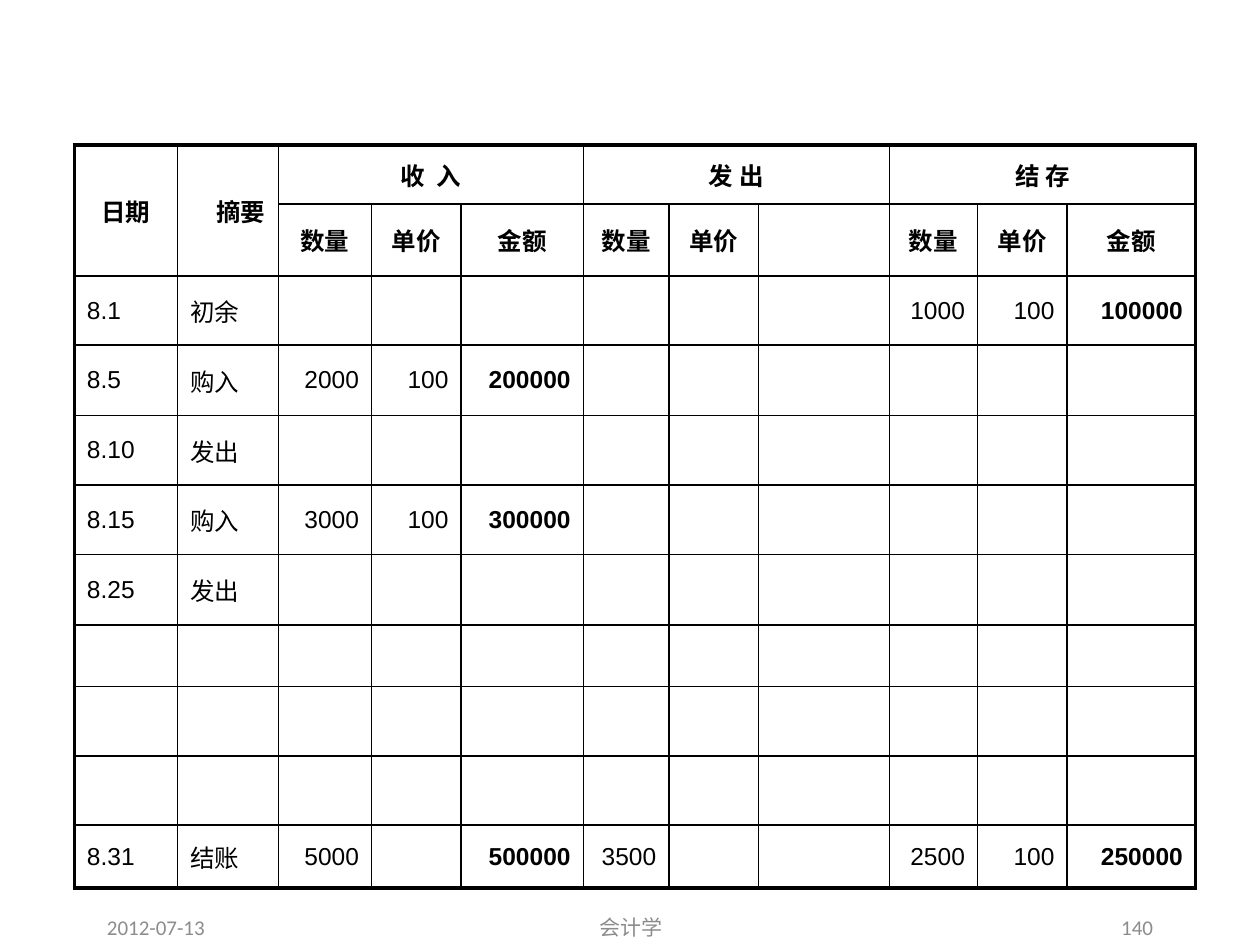
from dataclasses import dataclass

from lxml import etree
from pptx import Presentation
from pptx.dml.color import RGBColor
from pptx.enum.text import MSO_ANCHOR, PP_ALIGN
from pptx.oxml.ns import qn
from pptx.slide import Slide
from pptx.table import Table, _Cell
from pptx.text.text import _Paragraph
from pptx.util import Inches, Pt

LEFT, CENTER, RIGHT, JUSTIFY = PP_ALIGN.LEFT, PP_ALIGN.CENTER, PP_ALIGN.RIGHT, PP_ALIGN.JUSTIFY
MIDDLE = MSO_ANCHOR.MIDDLE
BLACK, GREY = "000000", "8C8C8C"
THIN, THICK = 1, 2.25
HEADER_ROWS = 2
LABEL_COLUMNS = 2
AMOUNT_COLUMNS = (4, 7, 10)
GROUP_COLUMNS = (2, 5, 8)

COLUMN_WIDTHS = (0.82, 0.8, 0.74, 0.71, 0.97, 0.68, 0.71, 1.04, 0.7, 0.71, 1.02)
ROW_HEIGHTS = (0.47, 0.57, 0.55, 0.56, 0.55, 0.55, 0.56, 0.49, 0.55, 0.55, 0.5)
LEDGER = (
    ("日期", "摘要", "收  入", "", "", "发 出", "", "", "结 存", "", ""),
    ("", "", "数量", "单价", "金额", "数量", "单价", "", "数量", "单价", "金额"),
    ("8.1", "初余", "", "", "", "", "", "", "1000", "100", "100000"),
    ("8.5", "购入", "2000", "100", "200000"),
    ("8.10", "发出"),
    ("8.15", "购入", "3000", "100", "300000"),
    ("8.25", "发出"),
    (),
    (),
    (),
    ("8.31", "结账", "5000", "", "500000", "3500", "", "", "2500", "100", "250000"),
)


@dataclass(frozen=True)
class FooterItem:
    """A footer text with its horizontal place."""

    text: str
    left: float
    width: float
    alignment: PP_ALIGN


FOOTER = (
    FooterItem("2012-07-13", 0.75, 2.08, LEFT),
    FooterItem("会计学", 3.42, 3.17, CENTER),
    FooterItem("140", 7.17, 2.08, RIGHT),
)


def color(value: str) -> RGBColor:
    """Turn a hex string into a colour."""
    return RGBColor.from_string(value)


def write(paragraph: _Paragraph, text: str, fill: str, alignment: PP_ALIGN, font_format: dict) -> None:
    """Write one formatted run into a paragraph."""
    paragraph.alignment = alignment
    run = paragraph.add_run()
    run.text = text
    for name, value in font_format.items():
        setattr(run.font, name, value)
    run.font.color.rgb = color(fill)


def set_borders(cell: _Cell, widths: dict[str, float]) -> None:
    """Draw the four sides of a cell in black."""
    properties = cell._tc.get_or_add_tcPr()
    for side, width in widths.items():
        line = etree.SubElement(properties, qn(f"a:ln{side}"), w=str(Pt(width)))
        fill = etree.SubElement(line, qn("a:solidFill"))
        etree.SubElement(fill, qn("a:srgbClr"), val=BLACK)


def format_cell(table: Table, row: int, column: int) -> None:
    """Set the borders, fill and text of one ledger cell."""
    cell = table.cell(row, column)
    last_row = row + cell.span_height == len(ROW_HEIGHTS)
    last_column = column + cell.span_width == len(COLUMN_WIDTHS)
    edges = {"L": column == 0, "R": last_column, "T": row == 0, "B": last_row}
    set_borders(cell, {side: THICK if outer else THIN for side, outer in edges.items()})
    cell.fill.background()
    cell.vertical_anchor = MIDDLE
    text = LEDGER[row][column] if column < len(LEDGER[row]) else ""
    if not text:
        return
    header = row < HEADER_ROWS
    alignment = CENTER if header else JUSTIFY if column < LABEL_COLUMNS else RIGHT
    bold = header or column in AMOUNT_COLUMNS
    paragraph = cell.text_frame.paragraphs[0]
    paragraph.space_before = Pt(2.8)
    write(paragraph, text, BLACK, alignment, {"name": "Arial", "size": Pt(14), "bold": bold})
    if text == "摘要":
        paragraph.level = 1
        paragraph._p.get_or_add_pPr().set("marL", str(Inches(0.2)))
        paragraph._p.get_or_add_pPr().set("indent", "0")


def add_ledger(slide: Slide) -> None:
    """Add the inventory ledger table."""
    table = slide.shapes.add_table(
        len(ROW_HEIGHTS), len(COLUMN_WIDTHS), Inches(0.59), Inches(1.15),
        Inches(sum(COLUMN_WIDTHS)), Inches(sum(ROW_HEIGHTS)),
    ).table
    table.first_row = table.horz_banding = False
    for column, width in zip(table.columns, COLUMN_WIDTHS):
        column.width = Inches(width)
    for row, height in zip(table.rows, ROW_HEIGHTS):
        row.height = Inches(height)
    for column in range(LABEL_COLUMNS):
        table.cell(0, column).merge(table.cell(HEADER_ROWS - 1, column))
    for column in GROUP_COLUMNS:
        table.cell(0, column).merge(table.cell(0, column + 2))
    for row in range(len(ROW_HEIGHTS)):
        for column in range(len(COLUMN_WIDTHS)):
            format_cell(table, row, column)


def add_footer_item(slide: Slide, item: FooterItem) -> None:
    """Add one footer text box."""
    shape = slide.shapes.add_textbox(Inches(item.left), Inches(7.25), Inches(item.width), Inches(0.21))
    frame = shape.text_frame
    frame.word_wrap = True
    frame.vertical_anchor = MIDDLE
    write(frame.paragraphs[0], item.text, GREY, item.alignment, {"name": "Calibri", "size": Pt(12)})


def main() -> None:
    """Build and save the ledger slide."""
    presentation = Presentation()
    presentation.slide_width, presentation.slide_height = Inches(10), Inches(7.5)
    slide = presentation.slides.add_slide(presentation.slide_layouts[6])
    add_ledger(slide)
    for item in FOOTER:
        add_footer_item(slide, item)
    presentation.save("out.pptx")


if __name__ == "__main__":
    main()
